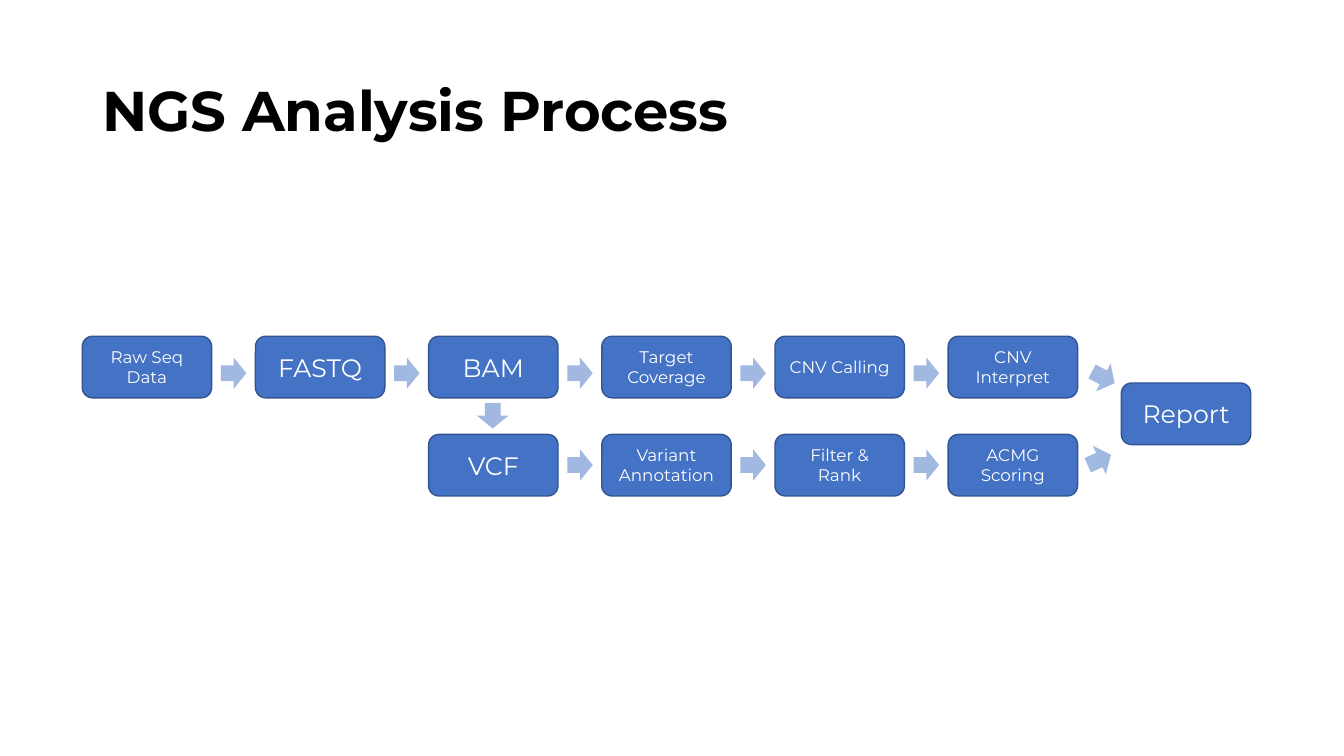
from lxml import etree
from pptx import Presentation
from pptx.dml.color import RGBColor
from pptx.enum.shapes import MSO_SHAPE
from pptx.enum.text import MSO_ANCHOR, PP_ALIGN
from pptx.oxml.ns import qn
from pptx.util import Pt

BOX = MSO_SHAPE.ROUNDED_RECTANGLE
ARROW = MSO_SHAPE.RIGHT_ARROW
MIDDLE = MSO_ANCHOR.MIDDLE
CENTER = PP_ALIGN.CENTER

BLUE = RGBColor(0x44, 0x72, 0xC4)
EDGE = RGBColor(0x32, 0x54, 0x91)
WHITE = RGBColor(0xFF, 0xFF, 0xFF)
BLACK = RGBColor(0, 0, 0)
FONT = "Montserrat"
LARGE, SMALL = 18, 12

# Flow grid, in points
LEFT, STEP = 58.8, 123.7
BOX_W, BOX_H = 92.4, 44
ARROW_W, ARROW_H = 18.2, 22.4
ARROW_DX = 99
UPPER, LOWER, REPORT = 240.2, 310.3, 273.6
UPPER_ARROW, LOWER_ARROW = 255.4, 321

# Each row: first column, box top, arrow top, steps with text size
ROWS = [
    (0, UPPER, UPPER_ARROW, [
        ("Raw Seq Data", SMALL), ("FASTQ", LARGE), ("BAM", LARGE),
        ("Target Coverage", SMALL), ("CNV Calling", SMALL),
        ("CNV Interpret", SMALL)]),
    (2, LOWER, LOWER_ARROW, [
        ("VCF", LARGE), ("Variant Annotation", SMALL),
        ("Filter & Rank", SMALL), ("ACMG Scoring", SMALL)]),
]

# Turned arrows: left, top, angle
TURNS = [(779, 258.4, 27.7), (776.2, 317.4, 335.6), (342.8, 285.8, 90)]


def write(frame, text, size, color, bold=False):
    frame.word_wrap = True
    frame.vertical_anchor = MIDDLE
    para = frame.paragraphs[0]
    para.text = text
    font = para.font
    font.name, font.size, font.bold = FONT, Pt(size), bold
    font.color.rgb = color
    return para


def add_title(slide, text):
    box = slide.shapes.add_textbox(Pt(66), Pt(28.8), Pt(828), Pt(104.4))
    para = write(box.text_frame, text, 40, BLACK, True)
    para.line_spacing = 0.9


def add_solid(slide, kind, x, y, w, h):
    shape = slide.shapes.add_shape(kind, Pt(x), Pt(y), Pt(w), Pt(h))
    shape.shadow.inherit = False
    shape.fill.solid()
    shape.fill.fore_color.rgb = BLUE
    return shape


def add_step(slide, col, top, text, size):
    box = add_solid(slide, BOX, LEFT + col * STEP, top, BOX_W, BOX_H)
    box.line.color.rgb = EDGE
    box.line.width = Pt(1)
    write(box.text_frame, text, size, WHITE).alignment = CENTER


def add_arrow(slide, x, y, angle=0):
    arrow = add_solid(slide, ARROW, x, y, ARROW_W, ARROW_H)
    arrow.rotation = angle
    arrow.line.fill.background()
    # Half transparent fill
    color = arrow.fill._xPr.find(qn("a:solidFill"))[0]
    etree.SubElement(color, qn("a:alpha")).set("val", "50000")


def main():
    deck = Presentation()
    deck.slide_width, deck.slide_height = Pt(960), Pt(540)
    slide = deck.slides.add_slide(deck.slide_layouts[6])

    add_title(slide, "NGS Analysis Process")

    # Steps of both branches, with arrows between neighbours
    for first, top, arrow_top, steps in ROWS:
        for col, (text, size) in enumerate(steps, first):
            add_step(slide, col, top, text, size)
            if col > first:
                x = LEFT + (col - 1) * STEP + ARROW_DX
                add_arrow(slide, x, arrow_top)

    # Shared end point and the turned arrows
    add_step(slide, 6, REPORT, "Report", LARGE)
    for x, y, angle in TURNS:
        add_arrow(slide, x, y, angle)

    deck.save("out.pptx")


if __name__ == "__main__":
    main()
